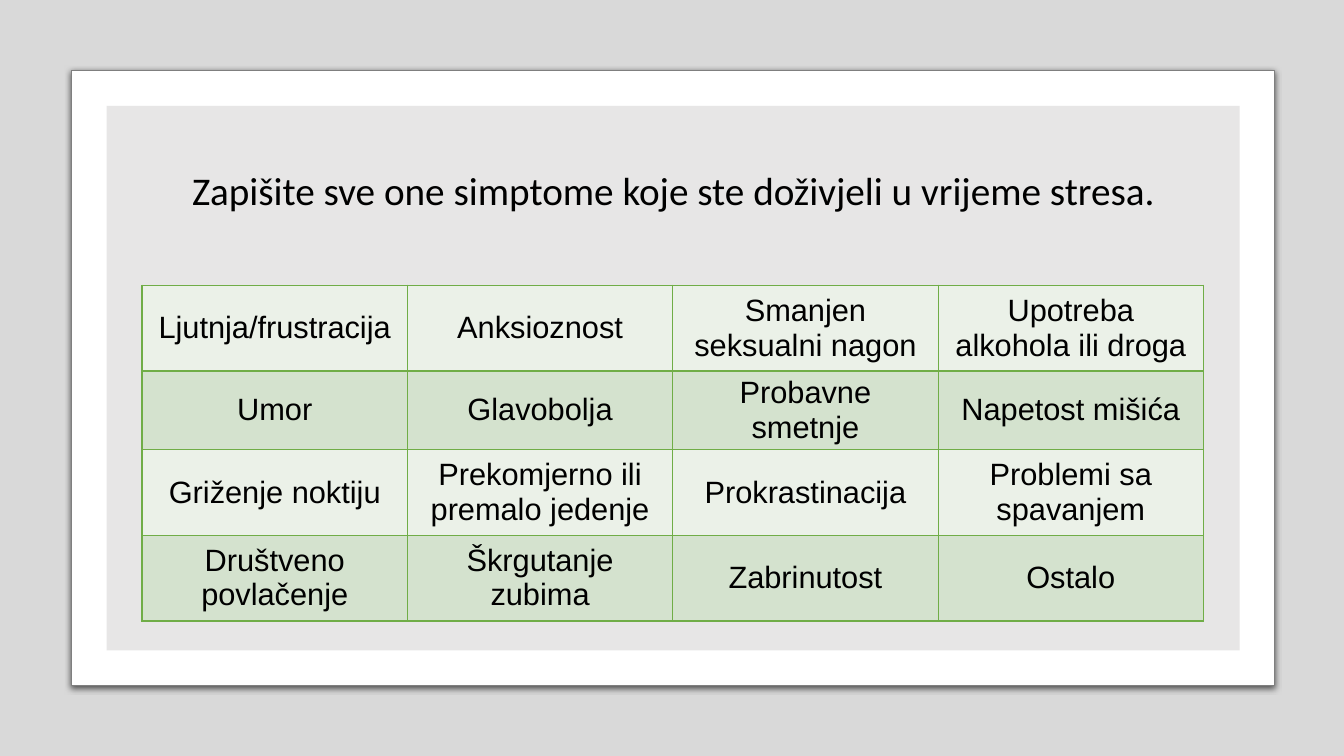
from dataclasses import dataclass

from lxml.etree import SubElement
from pptx import Presentation
from pptx.dml.color import RGBColor
from pptx.enum.shapes import MSO_SHAPE
from pptx.enum.text import MSO_ANCHOR, MSO_AUTO_SIZE, PP_ALIGN
from pptx.oxml.ns import qn
from pptx.util import Cm, Pt


@dataclass(frozen=True)
class Theme:
    ink: str = "000000"
    card: str = "FFFFFF"
    card_edge: str = "7F7F7F"
    panel: str = "E7E6E6"
    grid: str = "70AD47"
    bands: tuple = ("EBF1E8", "D4E2CE")
    title_font: str = "Calibri"
    title_size: int = 28
    cell_font: str = "Arial"
    cell_size: int = 22


def apply(target, values):
    for name, value in values.items():
        setattr(target, name, value)


def add_alpha(colour, percent):
    SubElement(colour, qn("a:alpha"), val=str(percent * 1000))


class SlideBuilder:
    def __init__(self, slide, theme):
        self.slide = slide
        self.theme = theme

    def box(self, bounds, colour, kind=MSO_SHAPE.RECTANGLE, edge=None):
        shape = self.slide.shapes.add_shape(kind, *map(Cm, bounds))
        shape.shadow.inherit = False
        shape.fill.solid()
        shape.fill.fore_color.rgb = RGBColor.from_string(colour)
        if edge:
            shape.line.color.rgb = RGBColor.from_string(edge)
            shape.line.width = Pt(0.75)
        else:
            shape.line.fill.background()
        return shape

    def backdrop(self, bounds, alpha):
        shape = self.box(bounds, self.theme.ink)
        add_alpha(shape._element.spPr.find(qn("a:solidFill"))[0], alpha)

    def card(self, bounds):
        shape = self.box(bounds, self.theme.card, MSO_SHAPE.ROUNDED_RECTANGLE,
                         self.theme.card_edge)
        shape.adjustments[0] = 0
        effects = shape._element.spPr.find(qn("a:effectLst"))
        shadow = SubElement(effects, qn("a:outerShdw"), blurRad=str(Pt(4.5)),
                            dist=str(Pt(1.5)), dir="5400000", rotWithShape="0")
        add_alpha(SubElement(shadow, qn("a:srgbClr"), val=self.theme.ink), 63)

    def centred_text(self, frame, text, font, size):
        frame.text = text
        paragraph = frame.paragraphs[0]
        paragraph.alignment = PP_ALIGN.CENTER
        run_font = paragraph.runs[0].font
        apply(run_font, {"name": font, "size": Pt(size)})
        run_font.color.rgb = RGBColor.from_string(self.theme.ink)
        return paragraph

    def title(self, bounds, text):
        title = self.slide.shapes.title
        apply(title, dict(zip(("left", "top", "width", "height"), map(Cm, bounds))))
        self.slide.shapes._spTree.append(title._element)
        frame = title.text_frame
        apply(frame, {"word_wrap": True, "auto_size": MSO_AUTO_SIZE.NONE,
                      "vertical_anchor": MSO_ANCHOR.MIDDLE})
        paragraph = self.centred_text(frame, text, self.theme.title_font,
                                      self.theme.title_size)
        paragraph.line_spacing = 0.9

    def cell(self, cell, text, colour):
        self.centred_text(cell.text_frame, text, self.theme.cell_font,
                          self.theme.cell_size)
        apply(cell, {"vertical_anchor": MSO_ANCHOR.MIDDLE,
                     "margin_left": Cm(0.24), "margin_right": Cm(0.24),
                     "margin_top": Cm(0.12), "margin_bottom": Cm(0.12)})
        properties = cell._tc.get_or_add_tcPr()
        for side in ("lnL", "lnR", "lnT", "lnB"):
            border = SubElement(properties, qn(f"a:{side}"), w=str(Pt(1)))
            fill = SubElement(border, qn("a:solidFill"))
            SubElement(fill, qn("a:srgbClr"), val=self.theme.grid)
        cell.fill.solid()
        cell.fill.fore_color.rgb = RGBColor.from_string(colour)

    def table(self, left, top, width, heights, rows):
        table = self.slide.shapes.add_table(
            len(rows), len(rows[0]), Cm(left), Cm(top), Cm(width), Cm(sum(heights))).table
        apply(table, {"first_row": False, "horz_banding": False})
        for index, (height, texts) in enumerate(zip(heights, rows)):
            table.rows[index].height = Cm(height)
            band = self.theme.bands[index % 2]
            for column, text in enumerate(texts):
                self.cell(table.cell(index, column), text, band)


SYMPTOMS = [
    ("Ljutnja/frustracija", "Anksioznost", "Smanjen seksualni nagon",
     "Upotreba alkohola ili droga"),
    ("Umor", "Glavobolja", "Probavne smetnje", "Napetost mišića"),
    ("Griženje noktiju", "Prekomjerno ili premalo jedenje", "Prokrastinacija",
     "Problemi sa spavanjem"),
    ("Društveno povlačenje", "Škrgutanje zubima", "Zabrinutost", "Ostalo"),
]


def main():
    deck = Presentation()
    apply(deck, {"slide_width": Cm(33.87), "slide_height": Cm(19.05)})
    builder = SlideBuilder(deck.slides.add_slide(deck.slide_layouts[5]), Theme())
    builder.backdrop((0, 0, 33.87, 19.05), 15)
    builder.card((1.8, 1.78, 30.33, 15.49))
    builder.box((2.69, 2.67, 28.55, 13.72), builder.theme.panel)
    builder.title((3.58, 3.56, 26.77, 2.59),
                  "Zapišite sve one simptome koje ste doživjeli u vrijeme stresa.")
    builder.table(3.58, 7.19, 26.75, (2.16, 1.24, 2.16, 2.16), SYMPTOMS)
    deck.save("out.pptx")


if __name__ == "__main__":
    main()
